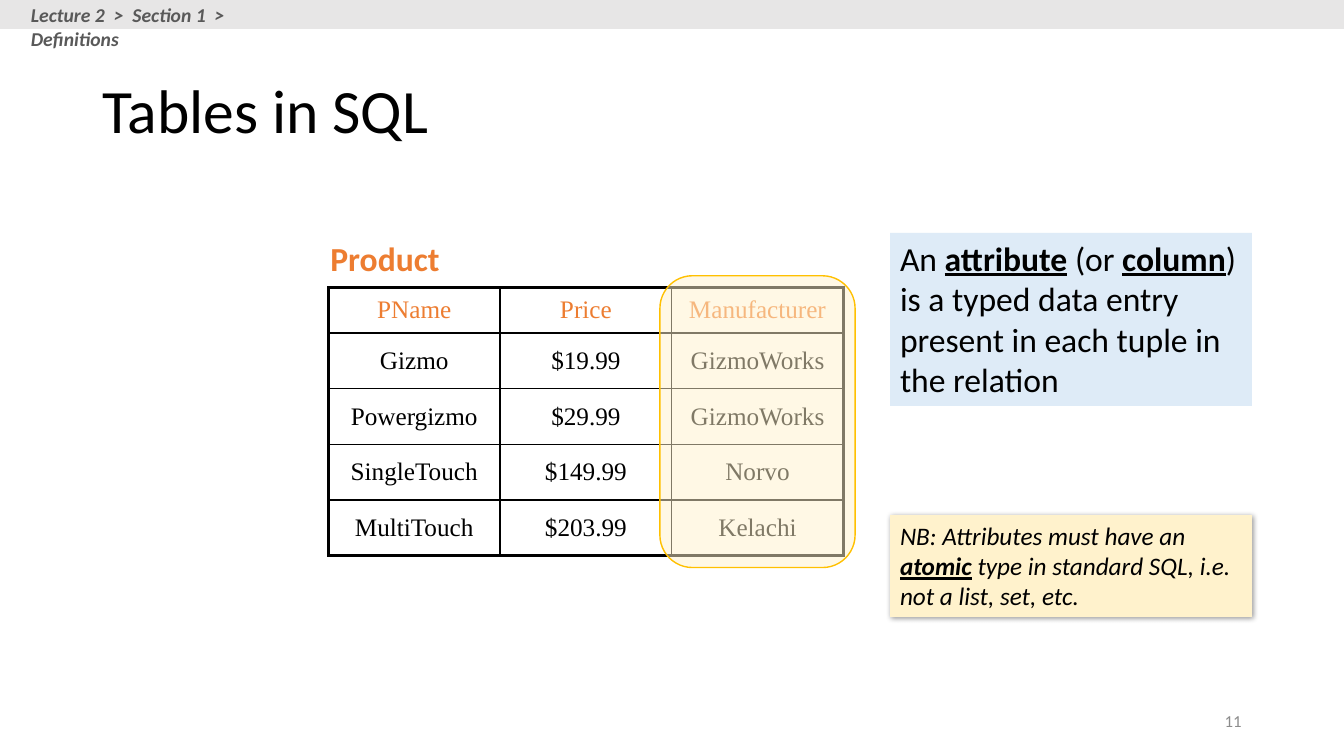
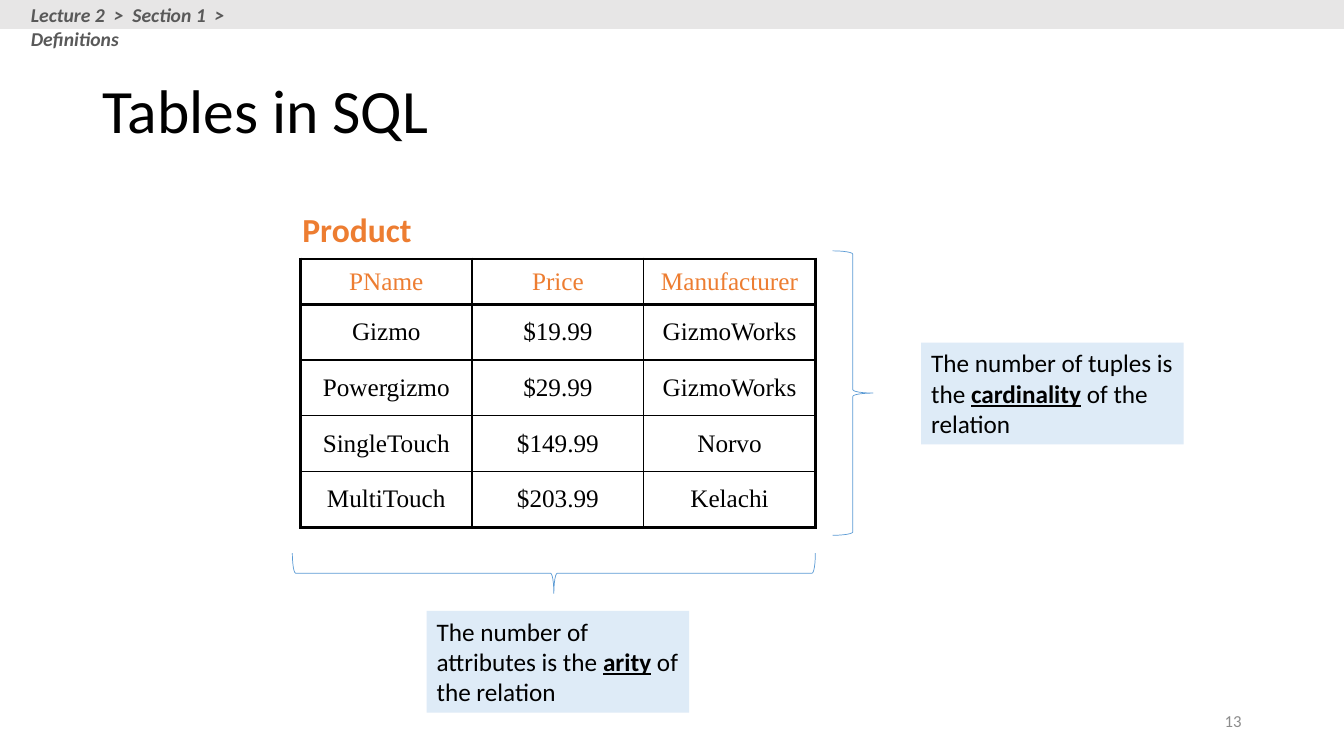
from lxml.etree import SubElement as Sub
from pptx import Presentation
from pptx.dml.color import RGBColor as RGB
from pptx.enum.shapes import MSO_SHAPE as Kind
from pptx.enum.text import MSO_ANCHOR as Anchor, MSO_AUTO_SIZE as Auto, PP_ALIGN as Align
from pptx.oxml.ns import qn
from pptx.util import Pt

HUE = {
    "ink": "000000", "head": "ED7D31", "band": "E7E6E6", "crumb": "595959",
    "page": "8C8C8C", "note": "DEEBF7", "warn": "FFF2CC", "gold": "FFC000",
    "brace": "5B9BD5",
}
BODY = {"name": "Calibri", "size": Pt(18)}
LARGE = {**BODY, "size": Pt(24)}
LABEL = {**LARGE, "bold": True}
TITLE = {**BODY, "size": Pt(44), "bold": False}
CRUMB = {**BODY, "size": Pt(14), "bold": True, "italic": True}
PAGE = {**BODY, "size": Pt(12)}
CELL = {"name": "Times New Roman", "size": Pt(18), "bold": False}
TERM = {"bold": True, "underline": True}

WIDE, HIGH = 960, 540
COL, TOP, ROW = 122.6, 32.4, 39.8
ROWS = [
    ("PName", "Price", "Manufacturer"),
    ("Gizmo", "$19.99", "GizmoWorks"),
    ("Powergizmo", "$29.99", "GizmoWorks"),
    ("SingleTouch", "$149.99", "Norvo"),
    ("MultiTouch", "$203.99", "Kelachi"),
]
GRID_W = COL * len(ROWS[0])
GRID_H = TOP + ROW * (len(ROWS) - 1)


def points(box):
    return [Pt(round(n, 2)) for n in box]


def style(font, look, hue):
    for key, value in look.items():
        setattr(font, key, value)
    font.color.rgb = RGB.from_string(HUE[hue])


def write(frame, text, look, hue="ink", align=Align.LEFT):
    para = frame.paragraphs[0]
    para.alignment = align
    for pos, part in enumerate(text.split("*")):
        run = para.add_run()
        run.text = part
        style(run.font, {**look, **TERM} if pos % 2 else look, hue)
    return para


def shape(slide, kind, box, fill=None, line=None, width=1):
    form = slide.shapes.add_shape(kind, *points(box))
    form.shadow.inherit = False
    if fill:
        form.fill.solid()
        form.fill.fore_color.rgb = RGB.from_string(HUE[fill])
    else:
        form.fill.background()
    if line:
        form.line.color.rgb = RGB.from_string(HUE[line])
        form.line.width = Pt(width)
    else:
        form.line.fill.background()
    return form


def label(slide, box, text, look, hue, align=Align.LEFT, wrap=True, anchor=Anchor.TOP):
    frame = slide.shapes.add_textbox(*points(box)).text_frame
    frame.word_wrap = wrap
    frame.vertical_anchor = anchor
    write(frame, text, look, hue, align)


def note(slide, box, text, look=BODY, fill="note"):
    form = shape(slide, Kind.RECTANGLE, box, fill)
    frame = form.text_frame
    frame.word_wrap = True
    frame.vertical_anchor = Anchor.TOP
    write(frame, text, look)
    return form


def shade(form):
    glow = form._element.spPr.find(qn("a:effectLst"))
    drop = Sub(glow, qn("a:outerShdw"), blurRad=str(Pt(4)), dist=str(Pt(1)),
               dir="2700000", algn="tl", rotWithShape="0")
    tint = Sub(drop, qn("a:srgbClr"), val=HUE["ink"])
    Sub(tint, qn("a:alpha"), val="40000")


def edge(cell, side, width):
    line = Sub(cell._tc.get_or_add_tcPr(), qn("a:ln" + side), w=str(Pt(width)))
    Sub(Sub(line, qn("a:solidFill")), qn("a:srgbClr"), val=HUE["ink"])


def table(slide, x, y):
    label(slide, (x - 5.7, y - 39, 93.6, 36), "Product", LABEL, "head", wrap=False)
    grid = slide.shapes.add_table(
        len(ROWS), len(ROWS[0]), *points((x, y, GRID_W, GRID_H))).table
    grid.first_row = grid.horz_banding = False
    for col in grid.columns:
        col.width = Pt(COL)
    last, end = len(ROWS) - 1, len(ROWS[0]) - 1
    for r, texts in enumerate(ROWS):
        grid.rows[r].height = Pt(ROW if r else TOP)
        for c, text in enumerate(texts):
            cell = grid.cell(r, c)
            cell.vertical_anchor = Anchor.MIDDLE
            thick = {"L": c == 0, "R": c == end, "T": r < 2, "B": r in (0, last)}
            for side, bold in thick.items():
                edge(cell, side, 2.25 if bold else 1)
            cell.fill.background()
            para = write(cell.text_frame, text, CELL, "ink" if r else "head", Align.CENTER)
            para.space_before = Pt(3.6)


def marker(slide, x, y, col, pad=8.4):
    box = (x + col * COL - pad, y - pad, COL + 2 * pad, GRID_H + 2 * pad)
    form = shape(slide, Kind.ROUNDED_RECTANGLE, box, "warn", "gold")
    tint = form._element.spPr.find(qn("a:solidFill")).find(qn("a:srgbClr"))
    Sub(tint, qn("a:alpha"), val="50000")


def brace(slide, box, turn=0):
    x, y, w, h = box
    if turn:
        x, y, w, h = x + (w - h) / 2, y + (h - w) / 2, h, w
    form = shape(slide, Kind.RIGHT_BRACE, (x, y, w, h), line="brace", width=0.5)
    form.rotation = turn


def base(deck, page):
    slide = deck.slides.add_slide(deck.slide_layouts[5])
    title = slide.shapes.title
    title.left, title.top, title.width, title.height = points((66, 28.8, 828, 104.4))
    frame = title.text_frame
    frame.auto_size = Auto.NONE
    frame.vertical_anchor = Anchor.MIDDLE
    write(frame, "Tables in SQL", TITLE).line_spacing = 0.9
    label(slide, (678, 500.4, 216, 28.8), page, PAGE, "page", Align.RIGHT,
          anchor=Anchor.MIDDLE)
    shape(slide, Kind.RECTANGLE, (0, 0, WIDE, 20.7), "band")
    label(slide, (15, -1.4, 218.2, 24.5), "Lecture 2  >  Section 1  >  Definitions",
          CRUMB, "crumb")
    return slide


def fields(deck, x, y):
    slide = base(deck, "11")
    table(slide, x, y)
    marker(slide, x, y, 2)
    left, width = x + 401.2, 258.4
    note(slide, (left, y - 39, width, 123.6),
         "An *attribute* (or *column*) is a typed data entry present in each tuple "
         "in the relation", LARGE)
    shade(note(slide, (left, y + 162.6, width, 72.7),
               "NB: Attributes must have an *atomic* type in standard SQL, "
               "i.e. not a list, set, etc.", {**BODY, "italic": True}, "warn"))


def counts(deck, x, y):
    slide = base(deck, "13")
    table(slide, x, y)
    pad, deep, wide, high = 5.8, 28.8, 187.4, 72.7
    brace(slide, (x + GRID_W + 12.4, y - pad, deep, GRID_H + 2 * pad))
    note(slide, (x + GRID_W + 75.6, y + 59.8, wide, high),
         "The number of tuples is the *cardinality* of the relation")
    brace(slide, (x - pad, y + GRID_H + 18.5, GRID_W + pad, deep), 90)
    note(slide, (x + 90.2, y + GRID_H + 59.8, wide, high),
         "The number of attributes is the *arity* of the relation")


def main():
    deck = Presentation()
    deck.slide_width, deck.slide_height = Pt(WIDE), Pt(HIGH)
    fields(deck, 234.6, 205.4)
    counts(deck, 214.6, 185)
    deck.save("out.pptx")


if __name__ == "__main__":
    main()
